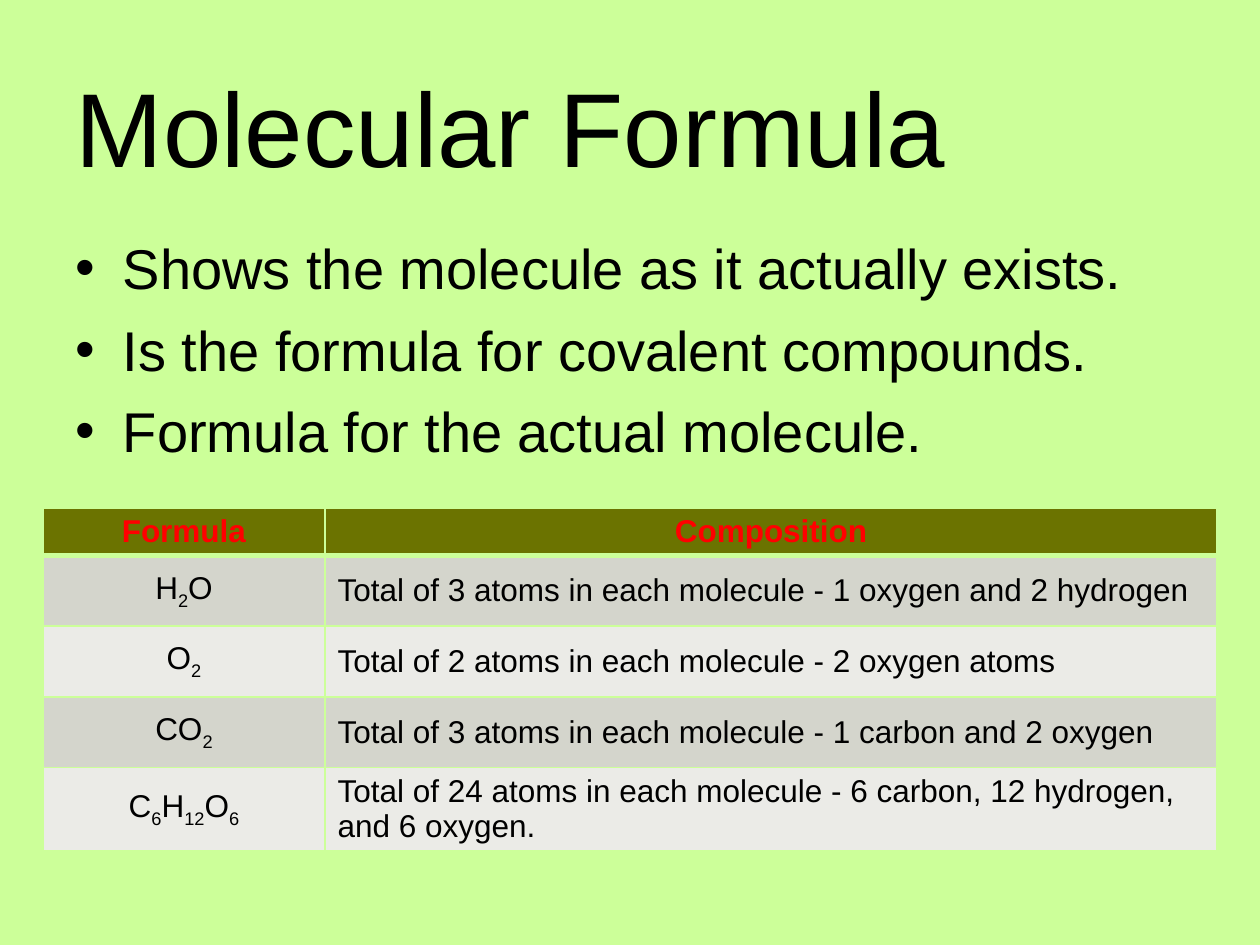
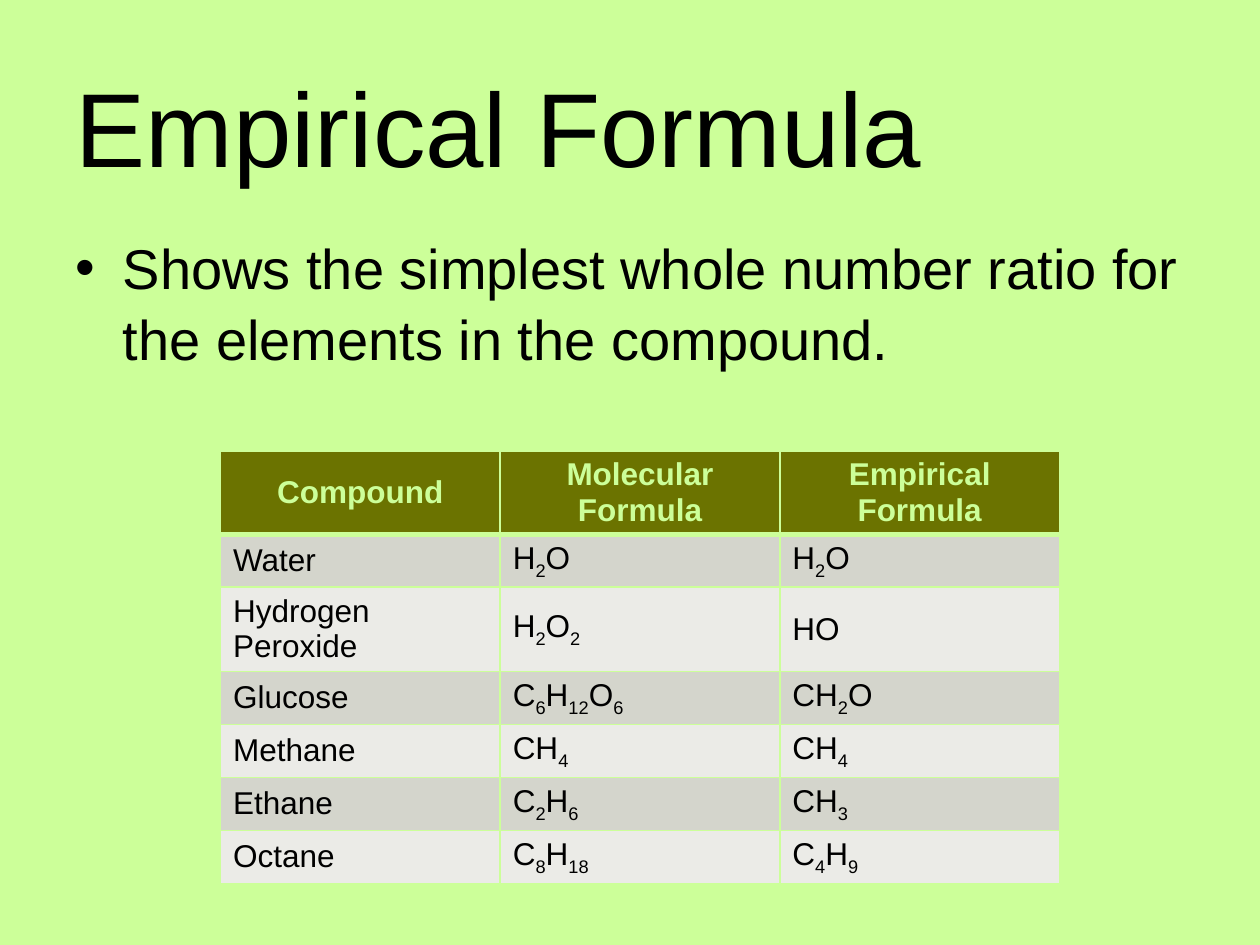
from itertools import groupby

from lxml.etree import SubElement
from pptx import Presentation
from pptx.dml.color import RGBColor
from pptx.enum.text import MSO_ANCHOR as Anchor, MSO_AUTO_SIZE as AutoSize, PP_ALIGN as Align
from pptx.oxml.ns import qn
from pptx.util import Inches, Pt

LIME = RGBColor(0xCC, 0xFF, 0x99)
OLIVE = RGBColor(0x6B, 0x73, 0x00)
GREY = RGBColor(0xD4, 0xD5, 0xCC)
PALE = RGBColor(0xEB, 0xEB, 0xE7)
BLACK = RGBColor(0, 0, 0)
RED = RGBColor(0xFF, 0, 0)
FONT = "Arial"

TITLE_BOX = (0.5, 0.3, 9, 1.25)
BODY_BOX = (0.5, 1.77, 9, 4.95)

MOLECULES = [
    ("Formula", "Composition"),
    ("H2O", "Total of 3 atoms in each molecule - 1 oxygen and 2 hydrogen"),
    ("O2", "Total of 2 atoms in each molecule - 2 oxygen atoms"),
    ("CO2", "Total of 3 atoms in each molecule - 1 carbon and 2 oxygen"),
    ("C6H12O6", "Total of 24 atoms in each molecule - 6 carbon, 12 hydrogen, and 6 oxygen."),
]
COMPOUNDS = [
    ("Compound", "Molecular Formula", "Empirical Formula"),
    ("Water", "H2O", "H2O"),
    ("Hydrogen Peroxide", "H2O2", "HO"),
    ("Glucose", "C6H12O6", "CH2O"),
    ("Methane", "CH4", "CH4"),
    ("Ethane", "C2H6", "CH3"),
    ("Octane", "C8H18", "C4H9"),
]


def write(para, text, size=18, color=BLACK, bold=False, align=Align.LEFT):
    """Write text into a paragraph, lowering the digits of one-word formulas."""
    para.alignment = align
    pieces = [(False, text)]
    if " " not in text:
        pieces = [(digit, "".join(chars)) for digit, chars in groupby(text, str.isdigit)]
    for lowered, piece in pieces:
        span = para.add_run()
        span.text = piece
        span.font.name = FONT
        span.font.size = Pt(size)
        span.font.bold = bold
        span.font.color.rgb = color
        if lowered:
            span.font._element.set("baseline", "-25000")


def place(shape, box):
    """Move a placeholder to a box given in inches and return its text frame."""
    shape.left, shape.top, shape.width, shape.height = map(Inches, box)
    frame = shape.text_frame
    frame.word_wrap = True
    frame.auto_size = AutoSize.NONE
    return frame


def add_page(deck, title, bullets):
    """Add a slide with its title and bullet list."""
    page = deck.slides.add_slide(deck.slide_layouts[1])
    heading = place(page.shapes.title, TITLE_BOX)
    heading.vertical_anchor = Anchor.BOTTOM
    write(heading.paragraphs[0], title, size=60)
    body = place(page.placeholders[1], BODY_BOX)
    for index, text in enumerate(bullets):
        para = body.add_paragraph() if index else body.paragraphs[0]
        para.space_before = Pt(6 if index else 0)
        para.line_spacing = 1.06
        write(para, text, size=32)
    return page


def set_borders(cell, row):
    """Rule a cell in lime, with a thick line under the header row."""
    widths = {"lnL": 1, "lnR": 1, "lnT": 3 if row == 1 else 1, "lnB": 3 if row == 0 else 1}
    properties = cell._tc.get_or_add_tcPr()
    for index, (tag, width) in enumerate(widths.items()):
        line = SubElement(properties, qn(f"a:{tag}"), w=str(Pt(width)))
        fill = SubElement(line, qn("a:solidFill"))
        SubElement(fill, qn("a:srgbClr"), val=str(LIME))
        properties.insert(index, line)


def add_grid(page, rows, left, top, widths, heights, header_color, centred=()):
    """Add a banded table, centring the header and the listed columns."""
    frame = page.shapes.add_table(len(rows), len(widths), Inches(left), Inches(top),
                                  Inches(sum(widths)), Inches(sum(heights)))
    table = frame.table
    table.first_row = table.horz_banding = False
    for column, width in zip(table.columns, widths):
        column.width = Inches(width)
    for r, (texts, height) in enumerate(zip(rows, heights)):
        table.rows[r].height = Inches(height)
        header = r == 0
        for c, text in enumerate(texts):
            cell = table.cell(r, c)
            cell.vertical_anchor = Anchor.MIDDLE
            cell.fill.solid()
            cell.fill.fore_color.rgb = OLIVE if header else (PALE, GREY)[r % 2]
            set_borders(cell, r)
            write(cell.text_frame.paragraphs[0], text, bold=header,
                  color=header_color if header else BLACK,
                  align=Align.CENTER if header or c in centred else Align.LEFT)


def molecular_page(deck):
    """Build the slide on molecular formulas."""
    page = add_page(deck, "Molecular Formula", [
        "Shows the molecule as it actually exists.",
        "Is the formula for covalent compounds.",
        "Formula for the actual molecule.",
    ])
    add_grid(page, MOLECULES, 0.34, 4.03, [2.24, 7.08], [0.37] + [0.56] * 3 + [0.66],
             RED, centred=(0,))


def empirical_page(deck):
    """Build the slide on empirical formulas."""
    page = add_page(deck, "Empirical Formula", [
        "Shows the simplest whole number ratio for the elements in the compound.",
    ])
    add_grid(page, COMPOUNDS, 1.75, 3.58, [2.22] * 3, [0.66, 0.41, 0.67] + [0.42] * 4, LIME)


def main():
    """Build and save the deck."""
    deck = Presentation()
    deck.slide_width, deck.slide_height = Inches(10), Inches(7.5)
    background = deck.slide_master.background.fill
    background.solid()
    background.fore_color.rgb = LIME
    molecular_page(deck)
    empirical_page(deck)
    deck.save("out.pptx")


if __name__ == "__main__":
    main()
